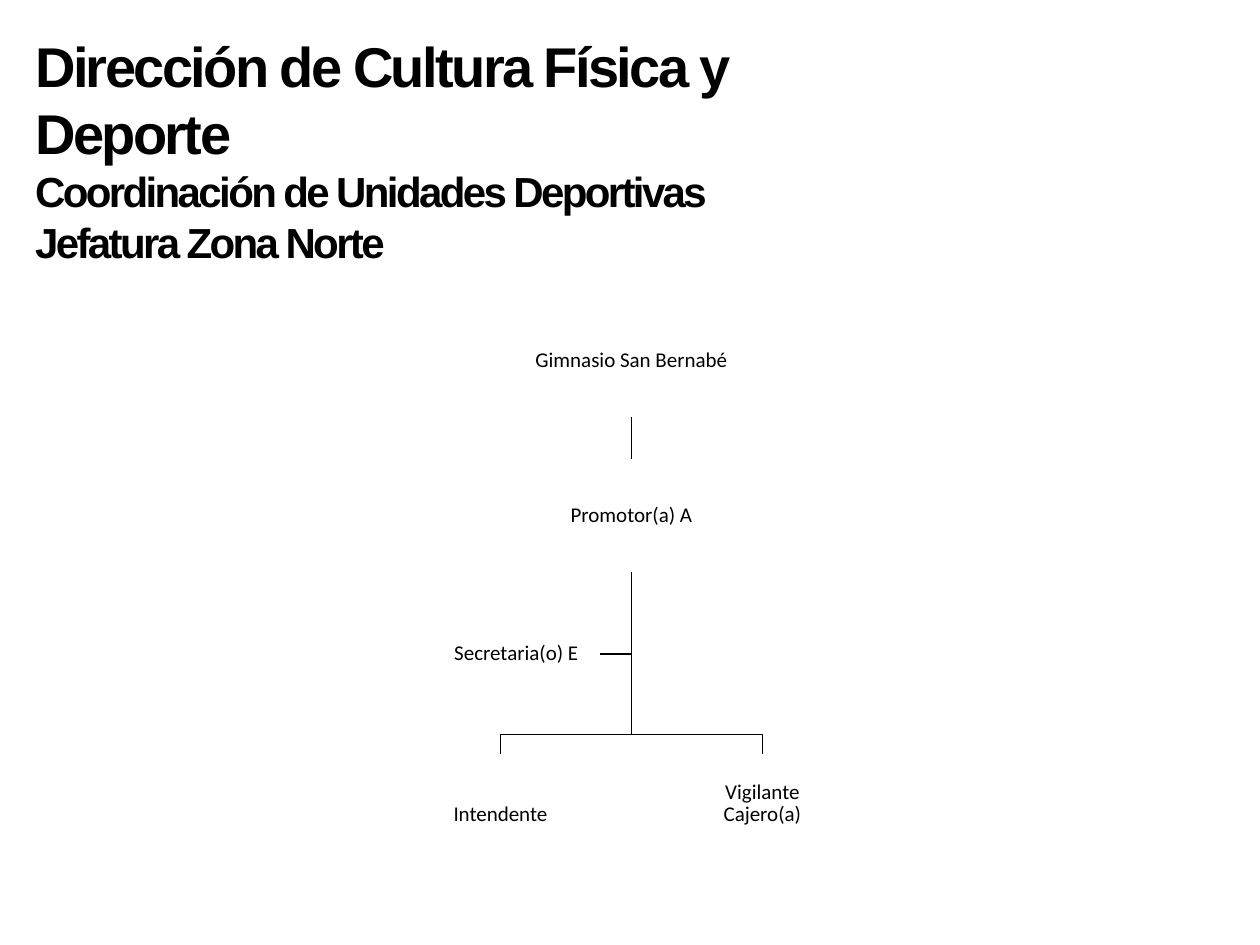
from pptx import Presentation
from pptx import util as u
from pptx.dml.color import RGBColor
from pptx.enum import shapes, text
from pptx.oxml.ns import qn
from lxml import etree

BLACK = RGBColor(0, 0, 0)
WHITE = RGBColor(255, 255, 255)

AXIS = 12.73    # centre of the chart, cm
SPREAD = 2.64   # from the axis to each lower post
BEND = 14.81    # height of the lower crossbar


class Chart:
    """Holds the style and the slide being drawn; lengths are in cm."""
    face = "Calibri"
    size = u.Pt(12)
    weight = u.Pt(1)

    def __init__(self, slide):
        self.slide = slide

    def title(self, left, top, width, height, lines):
        box = self.slide.shapes.add_textbox(*map(u.Cm, (left, top, width, height)))
        frame = box.text_frame
        frame.word_wrap = True
        frame.text = "\n".join(line for line, _ in lines)
        for para, (_, size) in zip(frame.paragraphs, lines):
            font = para.font
            font.name, font.size, font.bold = "Arial", u.Pt(size), True
            font.color.rgb = BLACK
            for run in para.runs:
                run.font._element.set("spc", "-150")

    def post(self, label, mid, top, width, height, lift=0):
        """Add a post centred on mid; lift raises its text."""
        box = self.slide.shapes.add_shape(
            shapes.MSO_SHAPE.RECTANGLE,
            *map(u.Cm, (mid - width / 2, top, width, height)))
        box.shadow.inherit = False
        box.fill.solid()
        box.fill.fore_color.rgb = WHITE
        box.line.fill.background()
        frame = box.text_frame
        frame.word_wrap = True
        frame.vertical_anchor = text.MSO_ANCHOR.MIDDLE
        frame.margin_left = frame.margin_right = frame.margin_top = u.Cm(0.02)
        frame.margin_bottom = u.Cm(0.02 + 2 * lift)
        para = frame.paragraphs[0]
        para.text = label
        para.alignment = text.PP_ALIGN.CENTER
        para.line_spacing = 0.9
        para.font.name, para.font.size = self.face, self.size
        para.font.color.rgb = BLACK
        return box

    def ink(self, line):
        line.color.rgb = BLACK
        line.width = self.weight

    def link(self, upper, lower):
        line = self.slide.shapes.add_connector(shapes.MSO_CONNECTOR.STRAIGHT, 0, 0, 0, 0)
        line.begin_connect(upper, 2)
        line.end_connect(lower, 0)
        self.ink(line.line)
        etree.SubElement(line._element.spPr, qn("a:effectLst"))

    def elbow(self, *points):
        start, *rest = [(u.Cm(x), u.Cm(y)) for x, y in points]
        pen = self.slide.shapes.build_freeform(*start)
        pen.add_line_segments(rest, close=False)
        path = pen.convert_to_shape()
        path.shadow.inherit = False
        path.fill.background()
        self.ink(path.line)


def main():
    deck = Presentation()
    deck.slide_width, deck.slide_height = u.Cm(25.4), u.Cm(19.05)
    chart = Chart(deck.slides.add_slide(deck.slide_layouts[6]))

    chart.title(0.46, 0.51, 18.31, 5.05, [
        ("Dirección de Cultura Física y Deporte", 32),
        ("Coordinación de Unidades Deportivas", 24),
        ("Jefatura Zona Norte", 24),
    ])

    gym = chart.post("Gimnasio San Bernabé", AXIS, 6.12, 5.45, 2.29)
    lead = chart.post("Promotor(a) A", AXIS, 9.25, 5.45, 2.29)
    chart.post("Secretaria(o) E", 10.41, 12.27, 3.35, 1.83)
    chart.link(gym, lead)

    foot = 11.54
    chart.elbow((AXIS, foot), (AXIS, 13.18), (12.09, 13.18))
    staff = [("Intendente", -1, 0), ("Vigilante\vCajero(a)", 1, 0.23)]
    for label, side, lift in staff:
        mid = AXIS + side * SPREAD
        chart.post(label, mid, 15.21, 4.45, 2.44, lift)
        chart.elbow((AXIS, foot), (AXIS, BEND), (mid, BEND), (mid, 15.21))

    deck.save("out.pptx")


if __name__ == "__main__":
    main()
